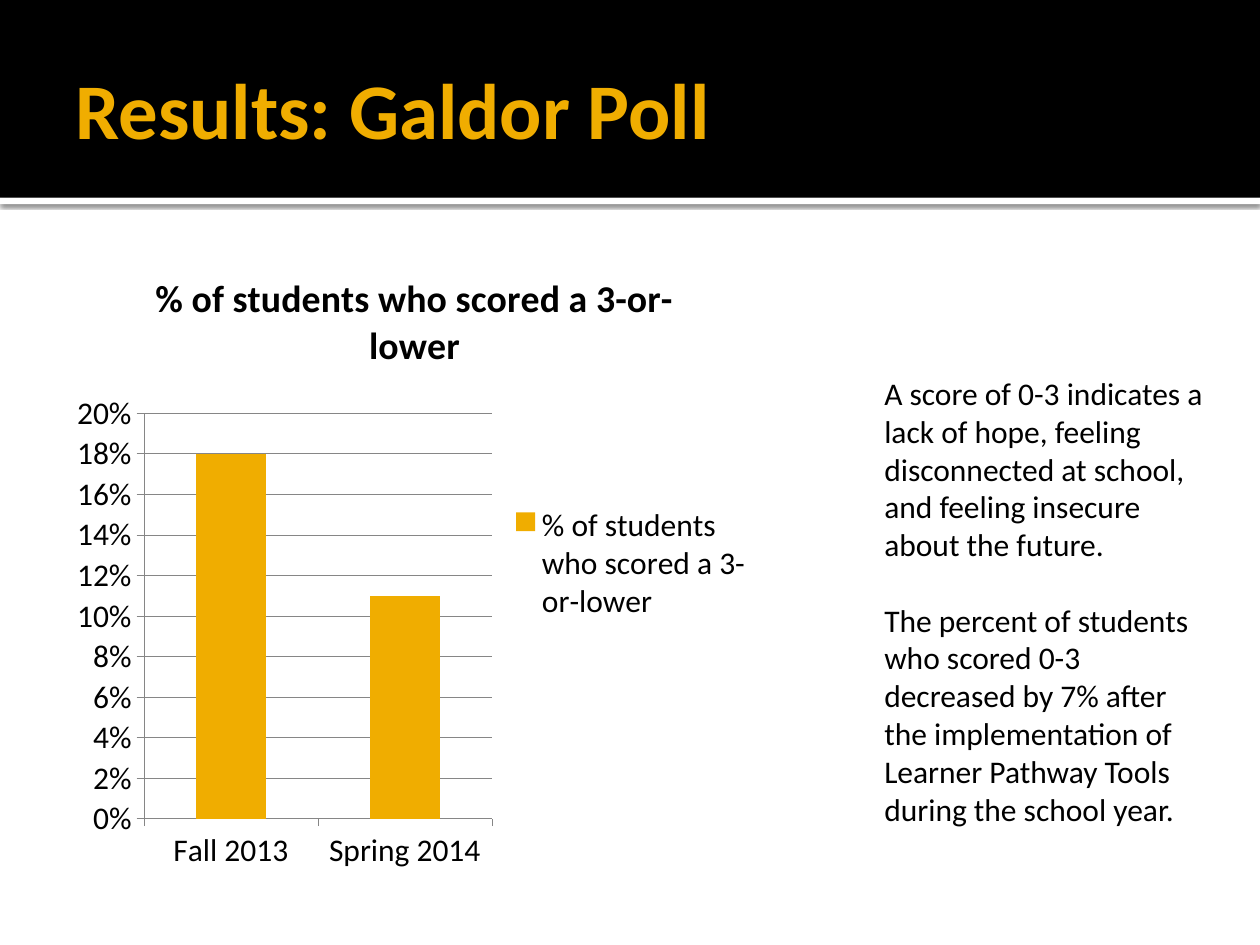
from dataclasses import dataclass

from pptx import Presentation
from pptx.chart.data import CategoryChartData
from pptx.dml.color import RGBColor
from pptx.enum.chart import XL_CHART_TYPE, XL_LEGEND_POSITION, XL_TICK_MARK
from pptx.enum.shapes import MSO_SHAPE
from pptx.enum.text import MSO_ANCHOR, MSO_AUTO_SIZE, PP_ALIGN
from pptx.oxml import parse_xml
from pptx.oxml.ns import nsdecls
from pptx.util import Inches, Pt

COLUMN = XL_CHART_TYPE.COLUMN_CLUSTERED
LEGEND_RIGHT = XL_LEGEND_POSITION.RIGHT
TICK_OUTSIDE = XL_TICK_MARK.OUTSIDE
RECTANGLE = MSO_SHAPE.RECTANGLE
MIDDLE = MSO_ANCHOR.MIDDLE
LEFT = PP_ALIGN.LEFT
NO_AUTOFIT = MSO_AUTO_SIZE.NONE
GROW = MSO_AUTO_SIZE.SHAPE_TO_FIT_TEXT


@dataclass
class Theme:
    font: str = "Calibri"
    gold: RGBColor = RGBColor(0xF0, 0xAD, 0x00)
    black: RGBColor = RGBColor(0, 0, 0)
    white: RGBColor = RGBColor(0xFF, 0xFF, 0xFF)
    grid: RGBColor = RGBColor(0x86, 0x86, 0x86)
    title_size: float = 45
    chart_title_size: float = 21.6
    body_size: float = 18


theme = Theme()


def style(font, size, color, bold=False):
    font.name = theme.font
    font.size = Pt(size)
    font.color.rgb = color
    font.bold = bold


deck = Presentation()
deck.slide_width, deck.slide_height = Inches(10), Inches(7.5)
page = deck.slides.add_slide(deck.slide_layouts.get_by_name("Title Only"))
page.background.fill.solid()
page.background.fill.fore_color.rgb = theme.white

# Header band above a white strip that casts a shadow
margin = Inches(0.5)
band_height = Inches(1.57)
strip_height = Inches(0.05)
for top, height, color in (
    (band_height, strip_height, theme.white),
    (0, band_height, theme.black),
):
    bar = page.shapes.add_shape(RECTANGLE, 0, top, deck.slide_width, height)
    bar.shadow.inherit = False
    bar.fill.solid()
    bar.fill.fore_color.rgb = color
    bar.line.fill.background()
    if color == theme.white:
        effects = bar.element.spPr.find("{*}effectLst")
        effects.append(parse_xml(
            f'<a:outerShdw {nsdecls("a")} blurRad="{Pt(2.5)}" dist="{Pt(0.8)}" '
            'dir="5400000" algn="t" rotWithShape="0"><a:srgbClr val="000000">'
            '<a:alpha val="60000"/></a:srgbClr></a:outerShdw>'
        ))

# Title, brought in front of the band
title = page.shapes.title
title.left, title.top = margin, Inches(0.17)
title.width, title.height = deck.slide_width - 2 * margin, Inches(1.37)
frame = title.text_frame
frame.auto_size = NO_AUTOFIT
frame.vertical_anchor = MIDDLE
frame.margin_left = Inches(0.1)
frame.margin_right = frame.margin_top = frame.margin_bottom = Inches(0.05)
para = frame.paragraphs[0]
para.alignment = LEFT
span = para.add_run()
span.text = "Results: Galdor Poll"
style(span.font, theme.title_size, theme.gold, bold=True)
page.shapes.element.append(title.element)

# Chart of low scores
measure = "% of students who scored a 3-or-lower"
scores = CategoryChartData(number_format="0%")
scores.categories = ["Fall 2013", "Spring 2014"]
scores.add_series(measure, [0.18, 0.11])
chart = page.shapes.add_chart(
    COLUMN, margin, Inches(1.94), Inches(5.58), Inches(5.06), scores
).chart
style(chart.font, theme.body_size, theme.black)

chart.has_title = True
span = chart.chart_title.text_frame.paragraphs[0].add_run()
span.text = measure
style(span.font, theme.chart_title_size, theme.black, bold=True)
chart.chart_title.include_in_layout = False

chart.has_legend = True
chart.legend.position = LEGEND_RIGHT
chart.legend.include_in_layout = False

plot = chart.plots[0]
plot.gap_width = 150
plot.vary_by_categories = False
columns = plot.series[0].format.fill
columns.solid()
columns.fore_color.rgb = theme.gold

chart.value_axis.has_major_gridlines = True
chart.value_axis.tick_labels.number_format = "0%"
chart.value_axis.tick_labels.number_format_is_linked = False
for axis in (chart.category_axis, chart.value_axis):
    axis.major_tick_mark = TICK_OUTSIDE
for part in (chart.category_axis, chart.value_axis, chart.value_axis.major_gridlines):
    part.format.line.color.rgb = theme.grid
    part.format.line.width = Pt(0.25)

# Explanation beside the chart
box = page.shapes.add_textbox(Inches(6.92), Inches(2.92), Inches(2.83), Inches(3.74))
frame = box.text_frame
frame.word_wrap = True
frame.auto_size = GROW
remarks = (
    "A score of 0-3 indicates a lack of hope, feeling disconnected at school, "
    "and feeling insecure about the future.",
    "The percent of students who scored 0-3 decreased by 7% after the "
    "implementation of Learner Pathway Tools during the school year.",
)
for index, remark in enumerate(remarks):
    para = frame.add_paragraph() if index else frame.paragraphs[0]
    para.space_before = Pt(21.5 * index)
    span = para.add_run()
    span.text = remark
    style(span.font, theme.body_size, theme.black)

deck.save("out.pptx")
